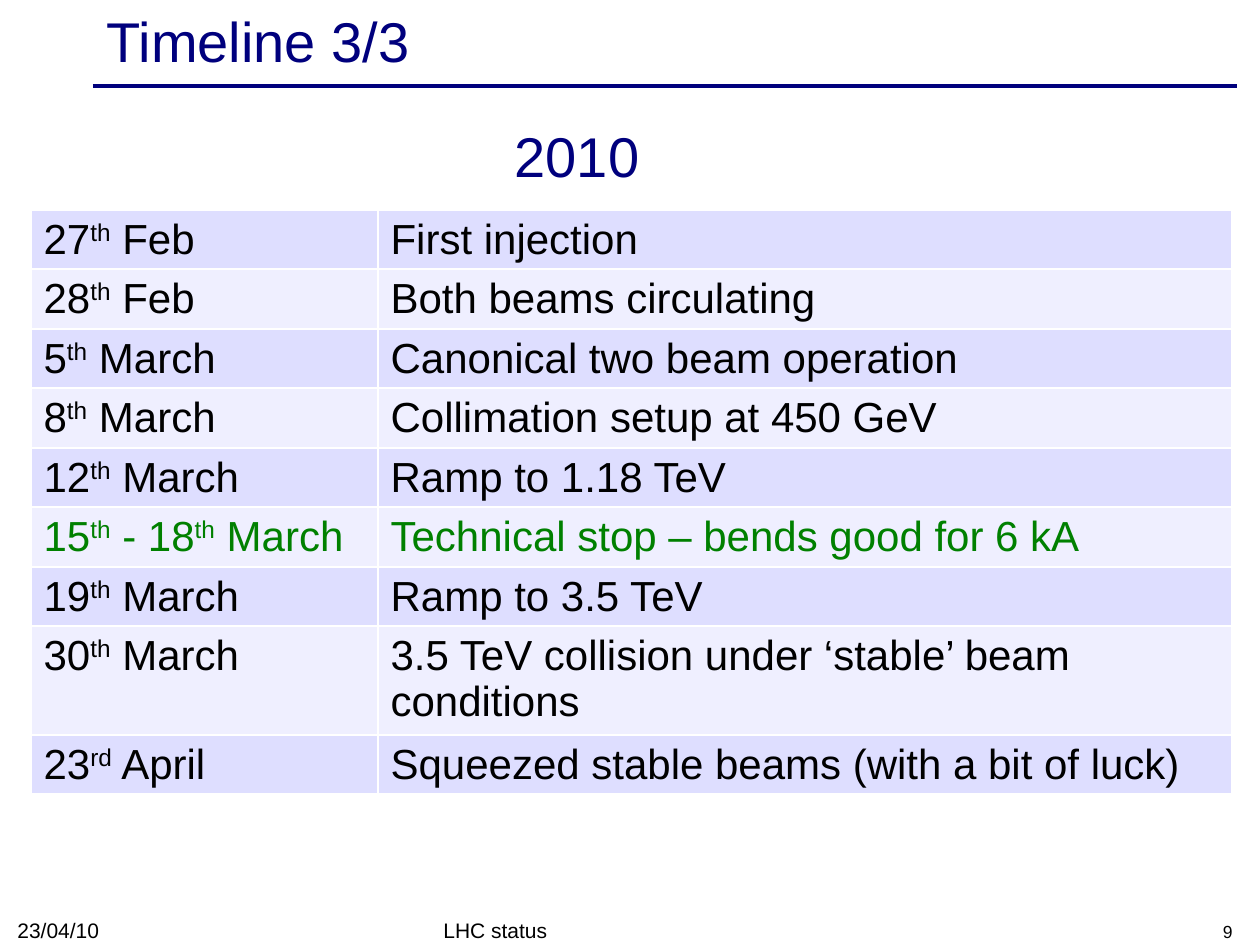
from lxml.etree import SubElement as Sub
from pptx import Presentation
from pptx.dml.color import RGBColor as RGB
from pptx.enum.shapes import MSO_CONNECTOR as Link
from pptx.enum.text import MSO_ANCHOR as Anchor, MSO_AUTO_SIZE as Fit, PP_ALIGN as Align
from pptx.oxml.ns import qn
from pptx.util import Pt

PX = 914400 / 126
NAVY = RGB(0x00, 0x00, 0x7D)
BLACK = RGB(0x00, 0x00, 0x00)
GREEN = RGB(0x00, 0x80, 0x00)
WHITE = RGB(0xFF, 0xFF, 0xFF)
BANDS = RGB(0xDE, 0xDE, 0xFF), RGB(0xEF, 0xEF, 0xFF)

COLS = 347, 854
ODD, EVEN, TALL = 59, 60, 106
EVENTS = [
    ("27^th^ Feb", "First injection", BLACK, ODD),
    ("28^th^ Feb", "Both beams circulating", BLACK, EVEN),
    ("5^th^ March", "Canonical two beam operation", BLACK, ODD),
    ("8^th^ March", "Collimation setup at 450 GeV", BLACK, EVEN),
    ("12^th^ March", "Ramp to 1.18 TeV", BLACK, ODD),
    ("15^th^ - 18^th^ March", "Technical stop – bends good for 6 kA", GREEN, EVEN),
    ("19^th^ March", "Ramp to 3.5 TeV", BLACK, ODD),
    ("30^th^ March", "3.5 TeV collision under ‘stable’ beam conditions", BLACK, TALL),
    ("23^rd^ April", "Squeezed stable beams (with a bit of luck)", BLACK, ODD),
]


def px(*vals):
    return [round(val * PX) for val in vals]


def write(frame, text, size, color, align=Align.LEFT):
    para = frame.paragraphs[0]
    para.alignment = align
    font = para.font
    font.name, font.size = "Arial", Pt(size)
    font.color.rgb = color
    for idx, part in enumerate(text.split("^")):
        run = para.add_run()
        run.text = part
        if idx % 2:
            run._r.get_or_add_rPr().set("baseline", "30000")


def add_title(slide, text):
    title = slide.shapes.title
    title.left, title.top, title.width, title.height = px(94, 4, 1134, 72)
    frame = title.text_frame
    frame.auto_size = Fit.NONE
    frame.vertical_anchor = Anchor.MIDDLE
    write(frame, text, 32, NAVY)


def add_rule(slide):
    rule = slide.shapes.add_connector(Link.STRAIGHT, *px(93, 86, 1237, 86))
    rule.line.color.rgb = NAVY
    rule.line.width = Pt(2)
    Sub(rule._element.spPr, qn("a:effectLst"))


def add_text(slide, box, text, size, color, align=Align.LEFT, anchor=Anchor.BOTTOM):
    frame = slide.shapes.add_textbox(*px(*box)).text_frame
    frame.word_wrap = True
    frame.vertical_anchor = anchor
    write(frame, text, size, color, align)


def add_edges(cell):
    props = cell._tc.get_or_add_tcPr()
    for side in ("lnL", "lnR", "lnT", "lnB"):
        edge = Sub(props, qn("a:" + side), w=str(Pt(1)))
        fill = Sub(edge, qn("a:solidFill"))
        Sub(fill, qn("a:srgbClr"), val=str(WHITE))


def add_dates(slide):
    high = sum(event[3] for event in EVENTS)
    box = px(31, 210, sum(COLS), high)
    table = slide.shapes.add_table(len(EVENTS), len(COLS), *box).table
    table.first_row = False
    for col, width in zip(table.columns, px(*COLS)):
        col.width = width
    for idx, (date, event, color, tall) in enumerate(EVENTS):
        row = table.rows[idx]
        row.height = px(tall)[0]
        for cell, text in zip(row.cells, (date, event)):
            add_edges(cell)
            cell.margin_bottom = px(2)[0]
            cell.fill.solid()
            cell.fill.fore_color.rgb = BANDS[idx % 2]
            write(cell.text_frame, text, 24, color)


def main():
    deck = Presentation()
    deck.slide_width, deck.slide_height = px(1260, 945)
    slide = deck.slides.add_slide(deck.slide_layouts[5])
    add_rule(slide)
    add_title(slide, "Timeline 3/3")
    add_text(slide, (283, 115, 588, 81), "2010", 32, NAVY, Align.CENTER, Anchor.MIDDLE)
    add_dates(slide)
    add_text(slide, (5, 912, 294, 37), "23/04/10", 12, BLACK)
    add_text(slide, (431, 913, 399, 36), "LHC status", 12, BLACK)
    add_text(slide, (951, 912, 294, 36), "9", 10, BLACK, Align.RIGHT)
    deck.save("out.pptx")


if __name__ == "__main__":
    main()
